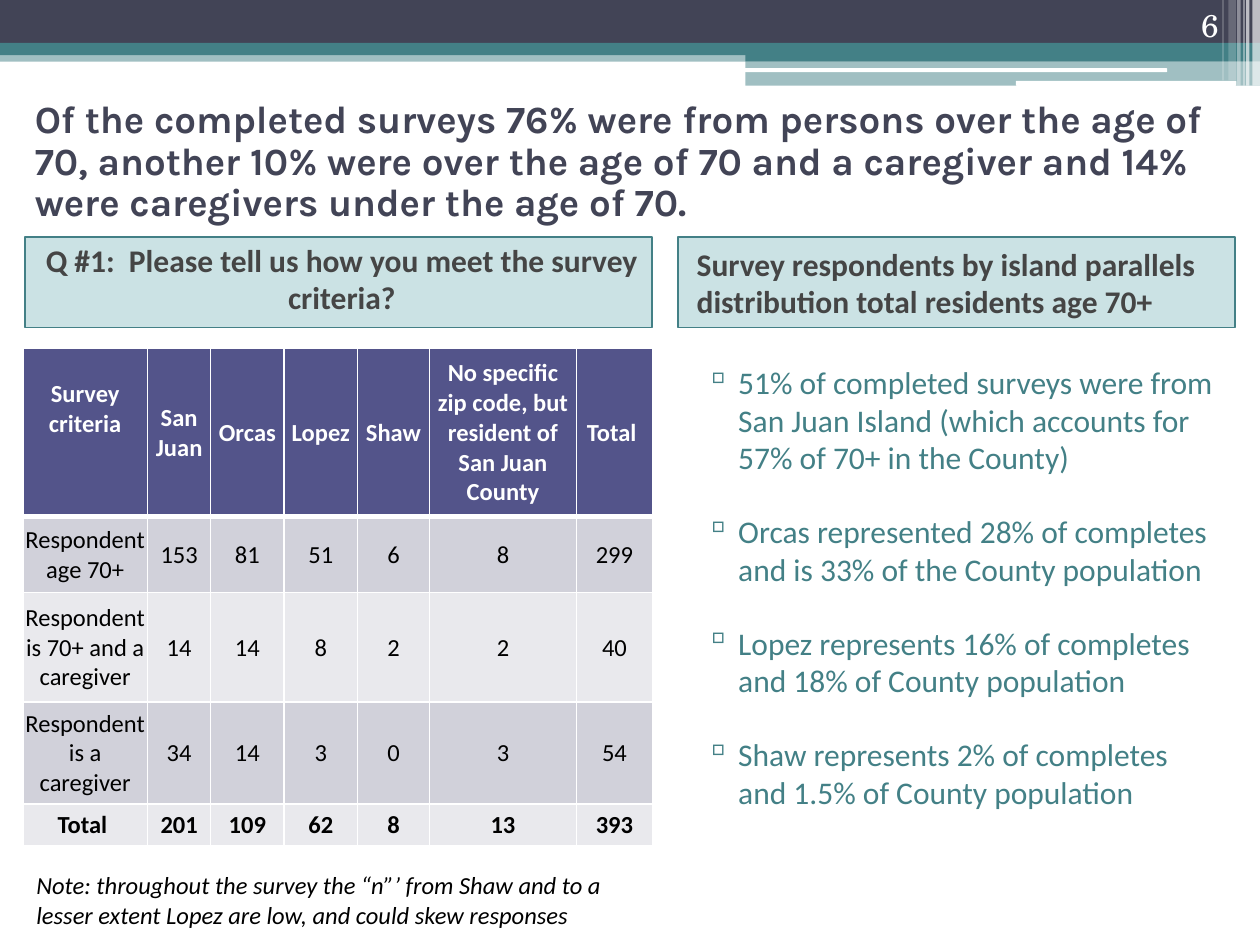
from lxml import etree
from pptx import Presentation
from pptx.dml.color import RGBColor
from pptx.enum.shapes import MSO_SHAPE
from pptx.enum.text import MSO_ANCHOR, PP_ALIGN
from pptx.oxml.ns import qn
from pptx.util import Pt

RECT, ROUND = MSO_SHAPE.RECTANGLE, MSO_SHAPE.ROUNDED_RECTANGLE
TOP, MIDDLE, BOTTOM = MSO_ANCHOR.TOP, MSO_ANCHOR.MIDDLE, MSO_ANCHOR.BOTTOM
LEFT, CENTER, RIGHT = PP_ALIGN.LEFT, PP_ALIGN.CENTER, PP_ALIGN.RIGHT
NAVY, TEAL, WHITE, BLACK = "424456", "438086", "FFFFFF", "000000"
PANEL, PANEL_TEXT = "328E97", "454545"
HEADER_FILL, ROW_FILLS = "53548A", ("D1D1DA", "E9E9ED")

# Content
TITLE = ("Of the completed surveys 76% were from persons over the age of 70, "
         "another 10% were over the age of 70 and a caregiver and 14% were "
         "caregivers under the age of 70.")
PAGE_NUMBER = "6"
# text, left, width, alignment, bottom inset
PANELS = [
    ("Q #1:  Please tell us how you meet the survey criteria?",
     14.4, 358.4, CENTER, 8),
    ("Survey respondents by island parallels distribution total residents age 70+",
     387.4, 318.2, LEFT, 3.6),
]
FINDINGS = [
    "51% of completed surveys were from San Juan Island (which accounts for "
    "57% of 70+ in the County)",
    "Orcas represented 28% of completes and is 33% of the County population",
    "Lopez represents 16% of completes and 18% of County population",
    "Shaw represents 2% of completes and 1.5% of County population",
]
CRITERIA = [
    ("Survey criteria", "San Juan", "Orcas", "Lopez", "Shaw",
     "No specific zip code, but resident of San Juan County", "Total "),
    ("Respondent age 70+", 153, 81, 51, 6, 8, 299),
    ("Respondent is 70+ and a caregiver", 14, 14, 8, 2, 2, 40),
    ("Respondent is a caregiver", 34, 14, 3, 0, 3, 54),
    ("Total ", 201, 109, 62, 8, 13, 393),
]
COLUMN_WIDTHS = (71.4, 36, 42, 42, 41, 84.2, 43.2)
ROW_HEIGHTS = (96.5, 43.2, 62.6, 58.3, 23.8)
NOTE = ("Note: throughout the survey the “n”’ from Shaw and to a lesser extent "
        "Lopez are low, and could skew responses")

# Banner: shape, left, top, width, height, colour, opacity in percent
BANNER = [
    (RECT, 0, 28.8, 720, 6.5, TEAL, 50),
    (RECT, 0, 0, 720, 24.5, NAVY, 100),
    (RECT, 0, 24.5, 720, 7, TEAL, 100),
    (RECT, 426, 28, 294, 7, TEAL, 100),
    (RECT, 426, 35, 294, 14, TEAL, 50),
    (ROUND, 425.5, 39, 241.5, 2.2, WHITE, 100),
    (ROUND, 580.5, 46.2, 126, 2.8, WHITE, 100),
]
# Stripes at the right end: left, width, height, opacity in percent
STRIPES = [
    (715.7, 4.3, 49, 65), (712, 2, 49, 65), (710.5, 0.7, 49, 60),
    (707, 2, 49, 40), (702, 4.3, 46, 20), (698.5, 0.7, 46, 30),
]
BANNER += [(RECT, x, 0, w, h, WHITE, opacity) for x, w, h, opacity in STRIPES]

prs = Presentation()
prs.slide_width, prs.slide_height = Pt(720), Pt(540)
slide = prs.slides.add_slide(prs.slide_layouts[6])
shapes = slide.shapes


def color(value):
    return RGBColor.from_string(value)


def add_block(kind, x, y, w, h, fill, opacity):
    block = shapes.add_shape(kind, Pt(x), Pt(y), Pt(w), Pt(h))
    block.shadow.inherit = False
    block.fill.solid()
    block.fill.fore_color.rgb = color(fill)
    block.line.fill.background()
    if opacity < 100:
        srgb = block.fill._xPr.find(qn("a:solidFill")).find(qn("a:srgbClr"))
        etree.SubElement(srgb, qn("a:alpha"), val=str(opacity * 1000))
    return block


def write(frame, texts, size, ink, font="Calibri", bold=False, italic=False,
          align=LEFT, anchor=TOP):
    frame.word_wrap = True
    frame.vertical_anchor = anchor
    frame.text = "\n".join(texts)
    for paragraph in frame.paragraphs:
        paragraph.alignment = align
        style = paragraph.runs[0].font
        style.name, style.size = font, Pt(size)
        style.bold, style.italic = bold, italic
        style.color.rgb = color(ink)


def add_text(x, y, w, h, texts, size, ink, **style):
    frame = shapes.add_textbox(Pt(x), Pt(y), Pt(w), Pt(h)).text_frame
    write(frame, texts, size, ink, **style)
    return frame


def indent(paragraph, margin, first=0):
    props = paragraph._p.get_or_add_pPr()
    props.set("marL", str(Pt(margin)))
    props.set("indent", str(Pt(first)))
    return props


def add_bullet(paragraph):
    props = indent(paragraph, 51.8, -19.4)
    bullet_color = etree.SubElement(props, qn("a:buClr"))
    etree.SubElement(bullet_color, qn("a:srgbClr"), val=TEAL)
    etree.SubElement(props, qn("a:buChar"), char="▫")


def set_borders(cell, widths):
    props = cell._tc.get_or_add_tcPr()
    for side, width in widths.items():
        line = etree.SubElement(props, qn("a:ln" + side), w=str(Pt(width)))
        fill = etree.SubElement(line, qn("a:solidFill"))
        etree.SubElement(fill, qn("a:srgbClr"), val=WHITE)


# Banner
for band in BANNER:
    add_block(*band)

# Title
title = add_text(12.8, 57, 688.3, 72, [TITLE], 22, NAVY, font="Karla",
                 bold=True, anchor=MIDDLE)
title.paragraphs[0].line_spacing = 0.9

# Panel headings
for text, x, w, align, inset in PANELS:
    panel = add_block(RECT, x, 135.4, w, 51.8, PANEL, 25)
    panel.line.color.rgb = color(TEAL)
    panel.line.width = Pt(1)
    heading = panel.text_frame
    write(heading, [text], 18, PANEL_TEXT, bold=True, align=align, anchor=MIDDLE)
    heading.margin_bottom = Pt(inset)
    heading.paragraphs[0].space_before = Pt(3)
    indent(heading.paragraphs[0], 3.6)

# Findings
findings = add_text(363, 203.8, 340.6, 306, FINDINGS, 18, TEAL)
for finding in findings.paragraphs:
    finding.space_before = Pt(3)
    finding.space_after = Pt(17.5)
    add_bullet(finding)

# Page number
add_text(643.7, 0, 59.8, 28.8, [PAGE_NUMBER], 18, WHITE,
         font="TeX Gyre Schola", align=RIGHT, anchor=BOTTOM)

# Survey criteria table
table = shapes.add_table(len(CRITERIA), len(COLUMN_WIDTHS), Pt(13), Pt(198.8),
                         Pt(sum(COLUMN_WIDTHS)), Pt(sum(ROW_HEIGHTS))).table
for column, width in zip(table.columns, COLUMN_WIDTHS):
    column.width = Pt(width)
for r, (values, height) in enumerate(zip(CRITERIA, ROW_HEIGHTS)):
    table.rows[r].height = Pt(height)
    header, total = r == 0, r == len(CRITERIA) - 1
    for c, value in enumerate(values):
        cell = table.cell(r, c)
        corner = header and c == 0
        set_borders(cell, {"L": 1, "R": 1, "T": 3 if r == 1 else 1,
                           "B": 3 if header else 1})
        cell.fill.solid()
        cell.fill.fore_color.rgb = color(HEADER_FILL if header
                                         else ROW_FILLS[(r - 1) % 2])
        cell.margin_left = cell.margin_right = Pt(0.7)
        cell.margin_top = Pt(17.8 if corner else 0.7)
        cell.margin_bottom = Pt(0)
        write(cell.text_frame, [str(value)], 14, WHITE if header else BLACK,
              bold=header or total, align=CENTER)
        cell.vertical_anchor = TOP if corner else MIDDLE

# Note
add_text(13.7, 493.9, 360, 41, [NOTE], 14, BLACK, italic=True)

prs.save("out.pptx")
